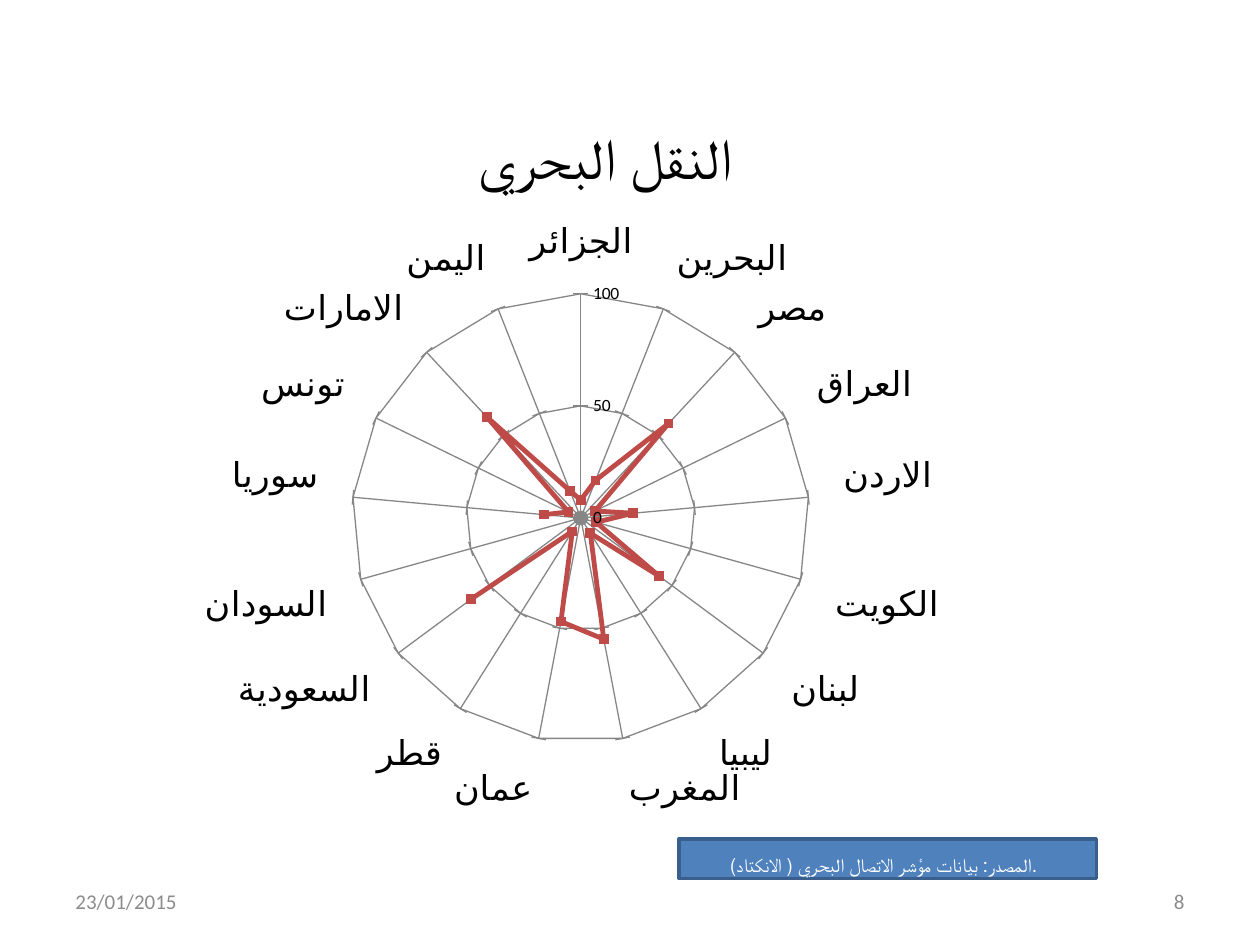
from lxml import etree
from pptx import Presentation
from pptx.chart.data import CategoryChartData
from pptx.dml.color import RGBColor
from pptx.enum import chart as chart_enum, shapes, text
from pptx.oxml import ns
from pptx.util import Pt

COLORS = {
    "text": "000000",
    "muted": "8C8C8C",
    "grid": "868686",
    "series": "BE4B48",
    "box": "4F81BD",
    "box_line": "3A5F8C",
    "white": "FFFFFF",
}
FONT = "Calibri"
CONNECTIVITY = {
    "الجزائر": 8,
    "البحرين": 18,
    "مصر": 57,
    "العراق": 7,
    "الاردن": 23,
    "الكويت": 7,
    "لبنان": 43,
    "ليبيا": 8,
    "المغرب": 55,
    "عمان": 47,
    "قطر": 7,
    "السعودية": 60,
    "السودان": None,
    "سوريا": 16,
    "تونس": 6,
    "الامارات": 61,
    "اليمن": 13,
}


def color(name):
    return RGBColor.from_string(COLORS[name])


def style_font(font, size, color_name):
    font.name = FONT
    font.size = Pt(size)
    font.color.rgb = color(color_name)


def write_text(shape, content, size, color_name, alignment):
    frame = shape.text_frame
    frame.word_wrap = True
    frame.text = content
    paragraph = frame.paragraphs[0]
    paragraph.alignment = alignment
    style_font(paragraph.runs[0].font, size, color_name)
    return frame


def add_title(slide, left, top, width, height):
    box = slide.shapes.add_textbox(Pt(left), Pt(top), Pt(width), Pt(height))
    frame = write_text(box, "النقل البحري", 32.4, "text", text.PP_ALIGN.CENTER)
    frame.margin_top = Pt(44)
    frame.margin_right = Pt(17)


def set_plot_layout(chart, **fractions):
    plot_area = chart._chartSpace.chart.plotArea
    for old_layout in plot_area.findall(ns.qn("c:layout")):
        plot_area.remove(old_layout)
    layout = etree.Element(ns.qn("c:layout"))
    manual = etree.SubElement(layout, ns.qn("c:manualLayout"))
    settings = {"layoutTarget": "inner", "xMode": "edge", "yMode": "edge", **fractions}
    for tag, value in settings.items():
        etree.SubElement(manual, ns.qn(f"c:{tag}")).set("val", str(value))
    plot_area.insert(0, layout)


def style_axis(axis, size):
    axis.has_major_gridlines = True
    axis.major_tick_mark = chart_enum.XL_TICK_MARK.CROSS
    axis.minor_tick_mark = chart_enum.XL_TICK_MARK.NONE
    style_font(axis.tick_labels.font, size, "text")
    for line in (axis.format.line, axis.major_gridlines.format.line):
        line.color.rgb = color("grid")
        line.width = Pt(0.75)


def add_radar(slide, left, top, width, height):
    data = CategoryChartData()
    data.categories = CONNECTIVITY.keys()
    data.add_series("Series 1", CONNECTIVITY.values())
    chart = slide.shapes.add_chart(
        chart_enum.XL_CHART_TYPE.RADAR_MARKERS,
        Pt(left), Pt(top), Pt(width), Pt(height), data,
    ).chart
    chart.has_title = False
    chart.has_legend = False
    style_font(chart.font, 10, "text")
    set_plot_layout(chart, x=0.24, y=0.1, w=0.48, h=0.86)
    style_axis(chart.category_axis, 20)
    style_axis(chart.value_axis, 10)
    chart.value_axis.minimum_scale = 0
    chart.value_axis.maximum_scale = 100
    chart.value_axis.major_unit = 50

    plot = chart.plots[0]
    plot.vary_by_categories = False
    series = plot.series[0]
    series.smooth = False
    series.format.line.color.rgb = color("series")
    series.format.line.width = Pt(2.75)
    marker = series.marker
    marker.style = chart_enum.XL_MARKER_STYLE.SQUARE
    marker.size = 5
    marker.format.fill.solid()
    marker.format.fill.fore_color.rgb = color("series")
    marker.format.line.color.rgb = color("series")


def add_source_box(slide, left, top, width, height):
    box = slide.shapes.add_shape(
        shapes.MSO_SHAPE.RECTANGLE, Pt(left), Pt(top), Pt(width), Pt(height)
    )
    box.shadow.inherit = False
    box.fill.solid()
    box.fill.fore_color.rgb = color("box")
    box.line.color.rgb = color("box_line")
    box.line.width = Pt(2)
    frame = write_text(
        box, "المصدر: بيانات مؤشر الاتصال البحري ( الانكتاد).",
        11, "white", text.PP_ALIGN.CENTER,
    )
    frame.vertical_anchor = text.MSO_ANCHOR.MIDDLE
    frame.margin_top = Pt(10)
    frame.margin_right = Pt(12)


def add_footer(slide, left, top, width, height):
    part_width = 168
    parts = (
        (left, "23/01/2015", text.PP_ALIGN.LEFT),
        (left + width - part_width, "8", text.PP_ALIGN.RIGHT),
    )
    for part_left, content, alignment in parts:
        box = slide.shapes.add_textbox(
            Pt(part_left), Pt(top), Pt(part_width), Pt(height)
        )
        frame = write_text(box, content, 12, "muted", alignment)
        frame.vertical_anchor = text.MSO_ANCHOR.MIDDLE


def main():
    presentation = Presentation()
    presentation.slide_width = Pt(720)
    presentation.slide_height = Pt(540)
    slide = presentation.slides.add_slide(presentation.slide_layouts[6])
    add_footer(slide, 36, 500.5, 648, 28.75)
    add_title(slide, 9, 26, 684, 57)
    add_radar(slide, 70.5, 116.5, 544.5, 345.5)
    add_source_box(slide, 388, 479.5, 238.5, 22.5)
    presentation.save("out.pptx")


if __name__ == "__main__":
    main()
